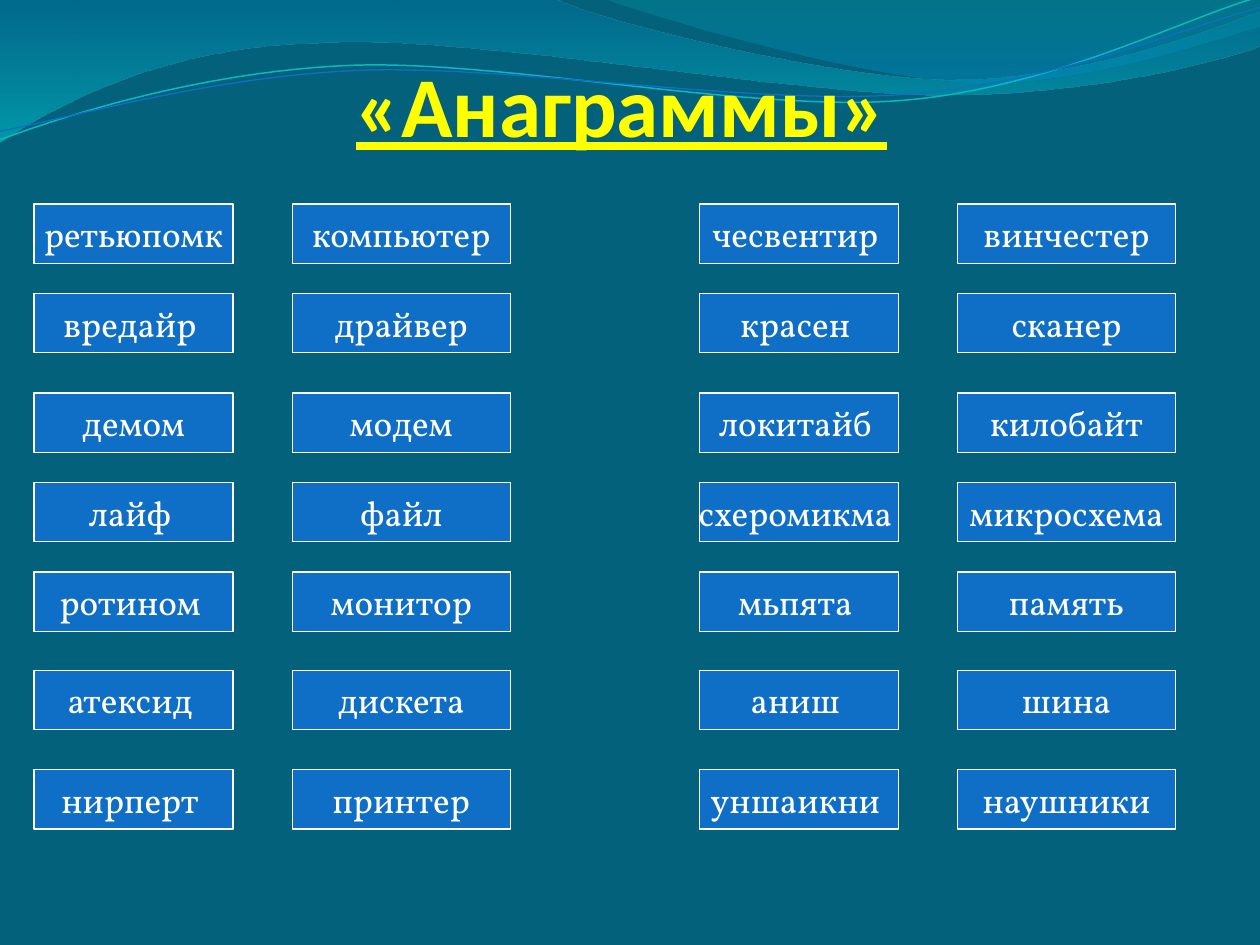
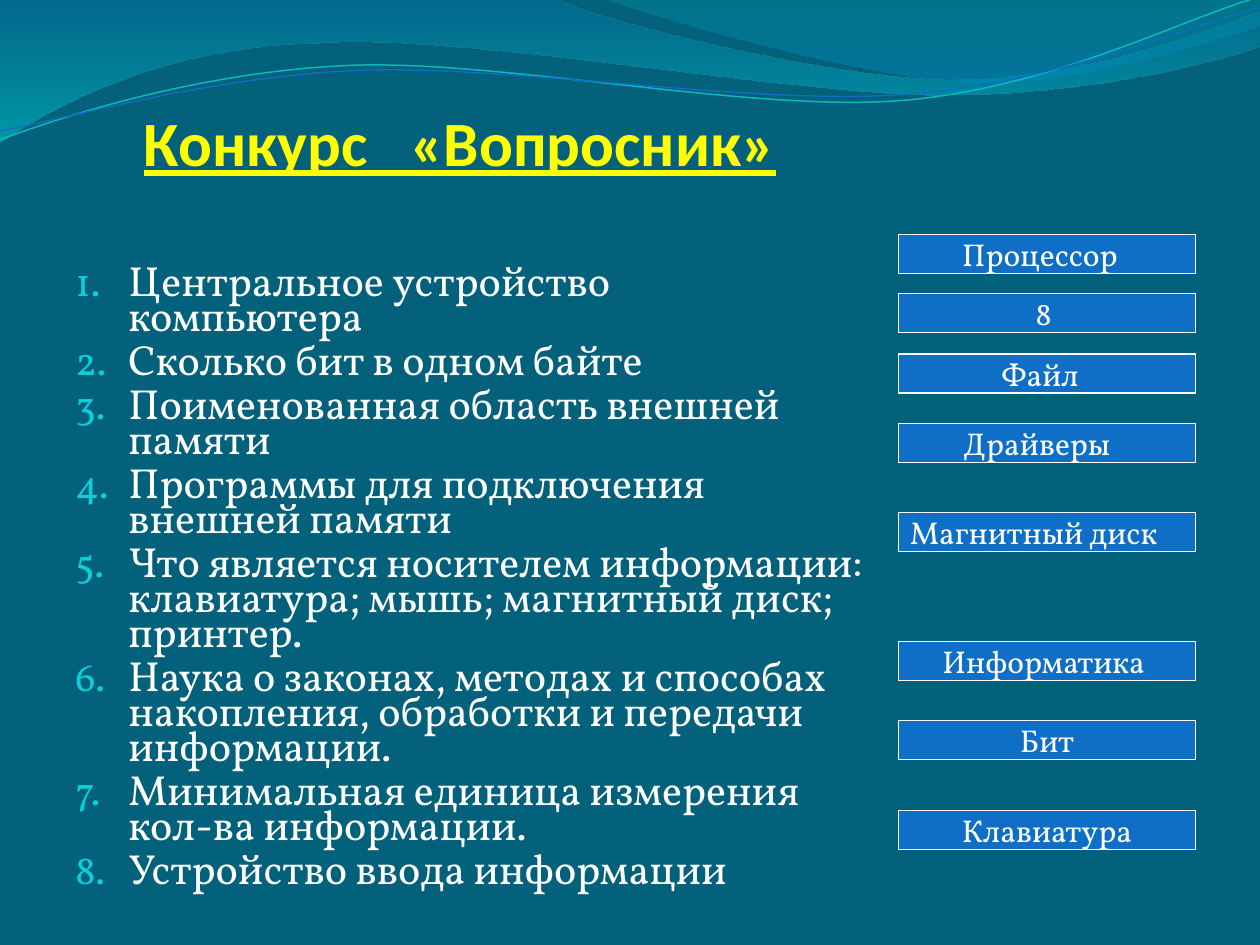
from lxml import etree
from pptx import Presentation
from pptx.dml.color import RGBColor
from pptx.enum.shapes import MSO_SHAPE
from pptx.enum.text import MSO_ANCHOR, PP_ALIGN
from pptx.oxml.ns import qn
from pptx.util import Inches, Pt

RECTANGLE = MSO_SHAPE.RECTANGLE
CENTER, LEFT = PP_ALIGN.CENTER, PP_ALIGN.LEFT
TOP, MIDDLE, BOTTOM = MSO_ANCHOR.TOP, MSO_ANCHOR.MIDDLE, MSO_ANCHOR.BOTTOM

BACKGROUND = RGBColor(0x04, 0x61, 0x7B)
BLUE = RGBColor(0x0F, 0x6F, 0xC6)
TEAL = RGBColor(0x0A, 0xB8, 0xBF)
NUMBER_COLOR = RGBColor(0x0B, 0xD0, 0xD9)
WHITE = RGBColor(0xFF, 0xFF, 0xFF)
YELLOW = RGBColor(0xFF, 0xFF, 0x00)
TITLE_FONT, BODY_FONT = "Calibri", "Vollkorn"

# An outline is a list of points; two numbers draw a line, six a Bézier curve.
# Gradient stops are (position, colour, opacity in percent).
BANDS = [
    ([(0, 0), (4.4, -0.01), (4.76, 0.17, 6.64, 0.63, 7.58, 0.63),
      (8.53, 0.63, 9.58, 0.26, 10, 0.09), (10.01, 0.36),
      (9.83, 0.44, 8.7, 0.76, 7.46, 0.75), (6.22, 0.75, 3.82, 0.28, 2.57, 0.34),
      (1.29, 0.36, 0.46, 0.83, -0.01, 1.13), (0, 0)],
     [(0, RGBColor(0x00, 0x74, 0xA1), 45), (1, RGBColor(0x00, 0xC6, 0xCF), 55)]),
    ([(4.79, -0.01), (5.09, 0.11, 6.82, 0.62, 7.69, 0.65),
      (8.56, 0.69, 9.61, 0.32, 10, 0.21), (10, 0), (4.79, -0.01)],
     [(0, RGBColor(0x00, 0xA1, 0xA9), 30), (0.8, RGBColor(0x00, 0x8B, 0xBF), 45)]),
]
WAVES = [
    ([(0, 1.11), (0.48, 0.93, 1.58, 0.57, 2.77, 0.52),
      (3.95, 0.47, 5.93, 0.89, 7.13, 0.8), (8.33, 0.71, 9.38, 0.15, 9.98, -0.02)],
     TEAL, 0.85),
    ([(0, 1.04), (0.47, 0.96, 1.64, 0.61, 2.83, 0.56),
      (4.03, 0.51, 5.97, 0.84, 7.17, 0.75), (8.36, 0.67, 9.41, 0.21, 10, 0.06)],
     BLUE, 0.75),
]

ANAGRAM_GROUPS = [
    (0.27, [("ретьюпомк", "компьютер"), ("вредайр ", "драйвер"), ("демом", "модем"),
            ("лайф ", "файл"), ("ротином ", "монитор"), ("атексид ", "дискета"),
            ("нирперт ", "принтер")]),
    (5.55, [("чесвентир ", "винчестер"), ("красен ", "сканер"), ("локитайб ", "килобайт"),
            ("схеромикма ", "микросхема"), ("мьпята ", "память"), ("аниш ", "шина"),
            ("уншаикни ", "наушники")]),
]
ANAGRAM_TOPS = [1.62, 2.33, 3.12, 3.83, 4.54, 5.32, 6.11]
SCRAMBLED_WIDTH, SOLVED_WIDTH, SOLVED_OFFSET = 1.58, 1.73, 2.05

QUESTIONS = [
    "Центральное устройство\vкомпьютера",
    "Сколько бит в одном байте",
    "Поименованная область внешней памяти",
    "Программы для подключения внешней памяти",
    "Что является носителем информации: клавиатура; мышь; магнитный диск; принтер.",
    "Наука о законах, методах и способах накопления, обработки и передачи информации.",
    "Минимальная единица измерения кол-ва информации.",
    "Устройство ввода информации",
]
# Answer, top of its box, extra room to the right of the text
ANSWERS = [
    ("Процессор", 1.86, 0.11), ("8", 2.33, 0.05), ("Файл", 2.81, 0.11),
    ("Драйверы", 3.36, 0.16), ("Магнитный диск", 4.07, 0.21),
    ("Информатика", 5.09, 0.05), ("Бит", 5.72, 0), ("Клавиатура", 6.43, 0),
]


def write_text(shape, lines, size, font=BODY_FONT, color=WHITE, bold=None, underline=None,
               align=LEFT, anchor=TOP, wrap=True, insets=(0.1, 0.05, 0.1, 0.05)):
    """Fill the shape with one paragraph per line; insets are left, top, right, bottom."""
    frame = shape.text_frame
    frame.word_wrap = wrap
    frame.vertical_anchor = anchor
    (frame.margin_left, frame.margin_top,
     frame.margin_right, frame.margin_bottom) = map(Inches, insets)
    for index, line in enumerate(lines):
        paragraph = frame.add_paragraph() if index else frame.paragraphs[0]
        paragraph.alignment = align
        paragraph.text = line
        for run in paragraph.runs:
            run.font.name = font
            run.font.size = Pt(size)
            run.font.bold = bold
            run.font.underline = underline
            run.font.color.rgb = color
    return frame.paragraphs


def add_text(slide, box, lines, size, **text_format):
    shape = slide.shapes.add_textbox(*map(Inches, box))
    return write_text(shape, lines, size, **text_format)


def add_title(slide, box, title, size, **text_format):
    add_text(slide, box, [title], size, font=TITLE_FONT, color=YELLOW, bold=True,
             underline=True, anchor=BOTTOM, **text_format)


def add_word_box(slide, box, word, size, right_gap=0):
    shape = slide.shapes.add_shape(RECTANGLE, *map(Inches, box))
    shape.shadow.inherit = False
    shape.fill.solid()
    shape.fill.fore_color.rgb = BLUE
    shape.line.color.rgb = WHITE
    shape.line.width = Pt(0.75)
    write_text(shape, [word], size, align=CENTER, anchor=MIDDLE, wrap=False,
               insets=(0.1, 0.05, 0.1 + right_gap, 0.05))


def add_outline(slide, outline, close):
    """Build a freeform through all points, then join each curve's three points."""
    points = [(Inches(segment[i]), Inches(segment[i + 1]))
              for segment in outline for i in range(0, len(segment), 2)]
    builder = slide.shapes.build_freeform(*points[0])
    builder.add_line_segments(points[1:], close=close)
    shape = builder.convert_to_shape()
    shape.shadow.inherit = False
    lines = shape.element.spPr.iter(qn("a:lnTo"))
    lines = iter(list(lines))
    for segment in outline[1:]:
        first = next(lines)
        if len(segment) == 6:
            first.tag = qn("a:cubicBezTo")
            for _ in range(2):
                line = next(lines)
                first.append(line[0])
                line.getparent().remove(line)
    return shape


def add_band(slide, outline, stops):
    shape = add_outline(slide, outline, close=True)
    shape.line.fill.background()
    shape.fill.gradient()
    shape.fill.gradient_angle = 270
    for stop, (position, color, _) in zip(shape.fill.gradient_stops, stops):
        stop.position = position
        stop.color.rgb = color
    for color_element, (_, _, opacity) in zip(shape.element.spPr.iter(qn("a:srgbClr")), stops):
        etree.SubElement(color_element, qn("a:alpha"), val=str(opacity * 1000))


def add_wave(slide, outline, color, width):
    shape = add_outline(slide, outline, close=False)
    shape.fill.background()
    shape.line.color.rgb = color
    shape.line.width = Pt(width)


def add_decorated_slide(presentation):
    slide = presentation.slides.add_slide(presentation.slide_layouts[6])
    slide.background.fill.solid()
    slide.background.fill.fore_color.rgb = BACKGROUND
    for band in BANDS:
        add_band(slide, *band)
    for wave in WAVES:
        add_wave(slide, *wave)
    return slide


def number_paragraph(paragraph):
    paragraph.line_spacing = 0.7
    paragraph.space_before = Pt(4.8)
    properties = paragraph._p.get_or_add_pPr()
    properties.set("marL", str(Inches(0.42)))
    properties.set("indent", str(-Inches(0.42)))
    number_color = etree.SubElement(properties, qn("a:buClr"))
    etree.SubElement(number_color, qn("a:srgbClr"), val=str(NUMBER_COLOR))
    etree.SubElement(properties, qn("a:buSzPct"), val="95000")
    etree.SubElement(properties, qn("a:buAutoNum"), type="arabicPeriod")


def build_anagrams(presentation):
    slide = add_decorated_slide(presentation)
    add_title(slide, (0.5, 0.77, 9, 0.46), "«Анаграммы»", 48.6, align=CENTER,
              insets=(0, 0.05, 0.14, 0))
    for left, pairs in ANAGRAM_GROUPS:
        for top, (scrambled, solved) in zip(ANAGRAM_TOPS, pairs):
            add_word_box(slide, (left, top, SCRAMBLED_WIDTH, 0.47), scrambled, 20)
            add_word_box(slide, (left + SOLVED_OFFSET, top, SOLVED_WIDTH, 0.47), solved, 20)


def build_questions(presentation):
    slide = add_decorated_slide(presentation)
    add_title(slide, (1.14, 0.77, 8.36, 1.25), "Конкурс   «Вопросник»", 36,
              insets=(0, 0.05, 0, 0.6))
    for paragraph in add_text(slide, (0.5, 1.55, 6.55, 5.75), QUESTIONS, 24,
                              insets=(0.1, 0.58, 0.1, 0.05)):
        number_paragraph(paragraph)
    for answer, top, right_gap in ANSWERS:
        add_word_box(slide, (7.13, top, 2.36, 0.31), answer, 18, right_gap)


def main():
    presentation = Presentation()
    presentation.slide_width = Inches(10)
    presentation.slide_height = Inches(7.5)
    build_anagrams(presentation)
    build_questions(presentation)
    presentation.save("out.pptx")


if __name__ == "__main__":
    main()
